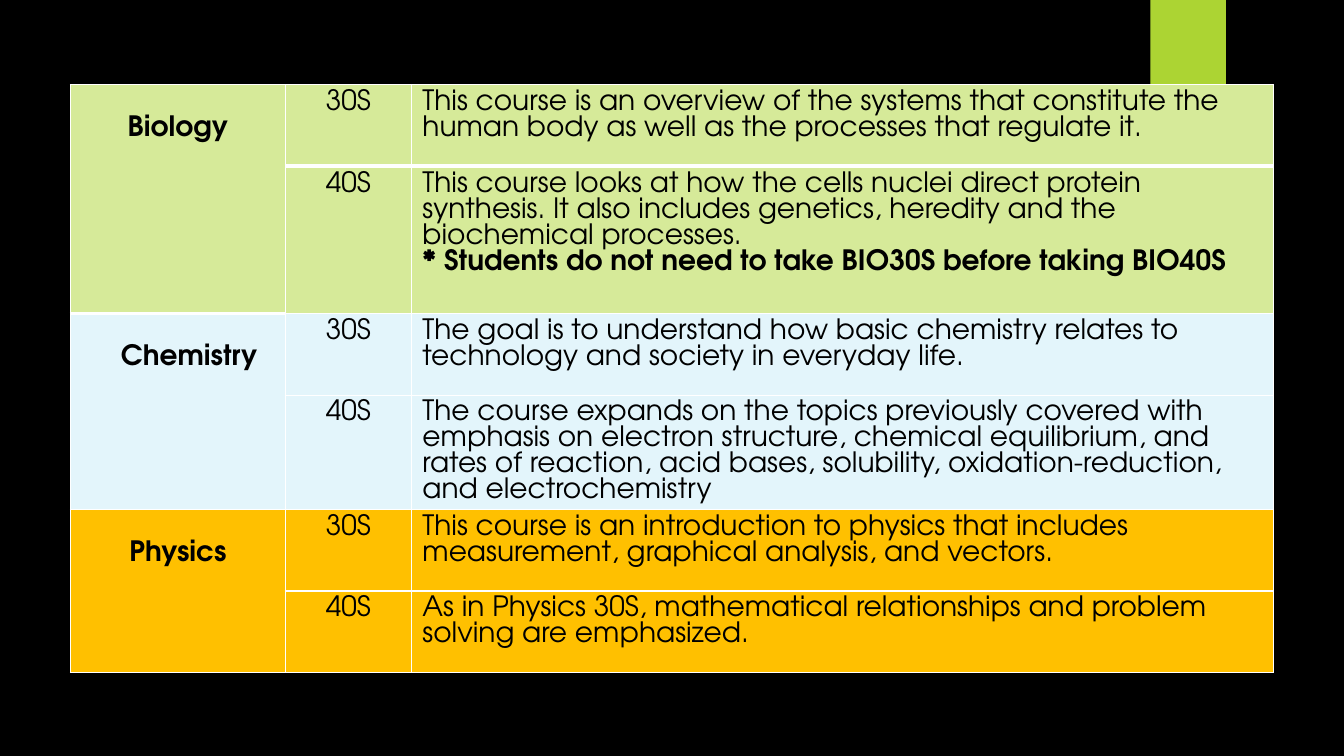
import pptx
import pptx.util
import pptx.dml.color
import pptx.enum.shapes
import pptx.enum.text
import pptx.oxml
import pptx.oxml.ns
from pptx.util import Inches

COURSES = [
    ("Biology", "D6EA99", [
        ("30S", 0.81, ["This course is an overview of the systems that constitute the human body as well as the processes that regulate it."]),
        ("40S", 1.46, ["This course looks at how the cells nuclei direct protein synthesis. It also includes genetics, heredity and the biochemical processes.",
                       "* Students do not need to take BIO30S before taking BIO40S"]),
    ]),
    ("Chemistry", "E3F5FB", [
        ("30S", 0.81, ["The goal is to understand how basic chemistry relates to technology and society in everyday life."]),
        ("40S", 1.13, ["The course expands on the topics previously covered with emphasis on electron structure, chemical equilibrium, and rates of reaction, acid bases, solubility, oxidation-reduction, and electrochemistry"]),
    ]),
    ("Physics", "FFC000", [
        ("30S", 0.81, ["This course is an introduction to physics that includes measurement, graphical analysis, and vectors."]),
        ("40S", 0.81, ["As in Physics 30S, mathematical relationships and problem solving are emphasized."]),
    ]),
]
COLUMN_WIDTHS = [2.13, 1.25, 8.55]


def color(value):
    return pptx.dml.color.RGBColor.from_string(value)


class CourseSlide:
    font = "TeX Gyre Adventor"
    size = 20
    ink = "000000"
    rule = "FFFFFF"

    def __init__(self, presentation):
        self.slide = presentation.slides.add_slide(presentation.slide_layouts[6])
        background = self.slide.background.fill
        background.solid()
        background.fore_color.rgb = color("000000")

    def rectangle(self, left, top, width, height, fill):
        tab = self.slide.shapes.add_shape(
            pptx.enum.shapes.MSO_SHAPE.RECTANGLE,
            Inches(left), Inches(top), Inches(width), Inches(height))
        tab.shadow.inherit = False
        tab.fill.solid()
        tab.fill.fore_color.rgb = color(fill)
        tab.line.fill.background()

    def table(self, left, top, widths, heights):
        grid = self.slide.shapes.add_table(
            len(heights), len(widths), Inches(left), Inches(top),
            Inches(sum(widths)), Inches(sum(heights))).table
        grid.first_row = False
        grid.horz_banding = False
        for column, width in zip(grid.columns, widths):
            column.width = Inches(width)
        for row, height in zip(grid.rows, heights):
            row.height = Inches(height)
        return grid

    def style_cell(self, cell, fill, bottom):
        properties = cell._tc.get_or_add_tcPr()
        for side, points in (("L", 1), ("R", 1), ("T", 1), ("B", bottom)):
            properties.append(pptx.oxml.parse_xml(
                f'<a:ln{side} {pptx.oxml.ns.nsdecls("a")} w="{pptx.util.Pt(points)}">'
                f'<a:solidFill><a:srgbClr val="{self.rule}"/></a:solidFill></a:ln{side}>'))
        cell.fill.solid()
        cell.fill.fore_color.rgb = color(fill)
        cell.margin_left = cell.margin_right = Inches(0.11)
        cell.margin_top = cell.margin_bottom = Inches(0.05)

    def cell_text(self, cell, lines, centered=False):
        for index, (text, bold) in enumerate(lines):
            frame = cell.text_frame
            paragraph = frame.add_paragraph() if index else frame.paragraphs[0]
            if centered:
                paragraph.alignment = pptx.enum.text.PP_ALIGN.CENTER
            run = paragraph.add_run()
            run.text = text
            run.font.name = self.font
            run.font.size = pptx.util.Pt(self.size)
            run.font.bold = bold
            run.font.color.rgb = color(self.ink)


def main():
    presentation = pptx.Presentation()
    presentation.slide_width = Inches(13.33)
    presentation.slide_height = Inches(7.5)
    page = CourseSlide(presentation)
    page.rectangle(11.41, 0, 0.75, 1.25, "ACD433")

    heights = [height for _, _, levels in COURSES for _, height, _ in levels]
    grid = page.table(0.7, 0.84, COLUMN_WIDTHS, heights)
    row = 0
    for subject, fill, levels in COURSES:
        subject_cell = grid.cell(row, 0)
        subject_cell.merge(grid.cell(row + len(levels) - 1, 0))
        for level, _, description in levels:
            for column in range(len(COLUMN_WIDTHS)):
                thick = subject == "Biology" and (column == 0 or level == "30S")
                page.style_cell(grid.cell(row, column), fill, 3 if thick else 1)
            page.cell_text(grid.cell(row, 1), [(level, False)], centered=True)
            page.cell_text(grid.cell(row, 2),
                           [(line, line.startswith("*")) for line in description])
            row += 1
        page.cell_text(subject_cell, [(subject, True)], centered=subject != "Chemistry")
        subject_cell.margin_top = Inches(0.31)
        if subject == "Chemistry":
            subject_cell.margin_left = Inches(0.5)

    presentation.save("out.pptx")


if __name__ == "__main__":
    main()
